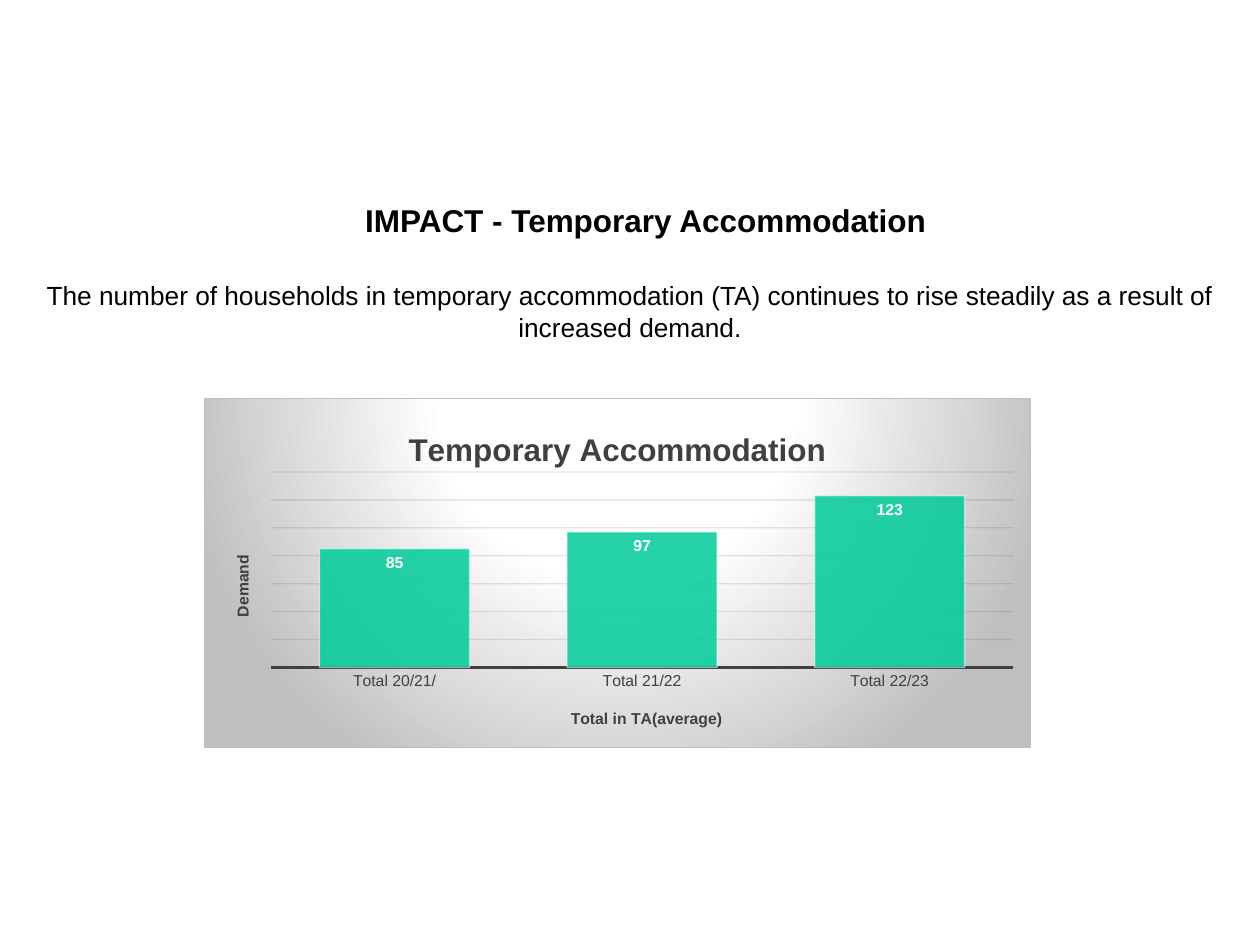
from lxml import etree
from pptx import Presentation, util as u
from pptx.chart.data import CategoryChartData
from pptx.dml.color import RGBColor
from pptx.enum import chart as ch, text
from pptx.oxml import parse_xml
from pptx.oxml.ns import nsdecls, qn

# Content: text, (left, top, width, height), size, bold, anchor
TEXTS = [
    ("IMPACT - Temporary Accommodation", (0.25, 1.58, 9.75, 0.33),
     18, True, text.MSO_ANCHOR.MIDDLE),
    ("The number of households in temporary accommodation (TA) continues to "
     "rise steadily as a result of increased demand.", (0.25, 2.17, 9.5, 4.5),
     15, False, text.MSO_ANCHOR.TOP),
]
DEMAND = {"Total 20/21/": 85, "Total 21/22": 97, "Total 22/23": 123}
CHART_AREA = (1.62, 3.16, 6.56, 2.78)
BACKDROP = [(0, "FFFFFF"), (39, "FFFFFF"), (100, "BFBFBF")]
FONT, GREY, WHITE = "Arial", "404040", "FFFFFF"


def rgb(value):
    return RGBColor.from_string(value)


def set_font(font, size, color, bold=False):
    font.name, font.size, font.bold = FONT, u.Pt(size), bold
    font.color.rgb = rgb(color)


def set_line(line, color, width):
    line.color.rgb = rgb(color)
    line.width = u.Pt(width)


def set_alpha(properties, percent):
    """Make every colour inside the element partly transparent."""
    for color in properties.iter(qn("a:srgbClr")):
        etree.SubElement(color, qn("a:alpha")).set("val", str(percent * 1000))


def place(parent, index, inner=False, **fractions):
    """Give a chart part a fixed position, in fractions of the chart."""
    for old in parent.findall(qn("c:layout")):
        parent.remove(old)
    layout = etree.Element(qn("c:layout"))
    manual = etree.SubElement(layout, qn("c:manualLayout"))
    settings = {"layoutTarget": "inner"} if inner else {}
    settings.update(xMode="edge", yMode="edge", **fractions)
    for tag, value in settings.items():
        etree.SubElement(manual, qn("c:" + tag)).set("val", str(value))
    parent.insert(index, layout)


def add_title(owner, words, size, x, y):
    title = owner.chart_title if hasattr(owner, "chart_title") else owner.axis_title
    para = title.text_frame.paragraphs[0]
    para.text = words
    set_font(para.font, size, GREY, True)
    element = para._p.getparent().getparent().getparent()
    place(element, 1, x=x, y=y)
    return element


deck = Presentation()
deck.slide_width, deck.slide_height = u.Inches(10), u.Inches(7.5)
page = deck.slides.add_slide(deck.slide_layouts[6])

# Heading and statement
for words, area, size, bold, anchor in TEXTS:
    box = page.shapes.add_textbox(*map(u.Inches, area))
    frame = box.text_frame
    frame.word_wrap, frame.vertical_anchor = True, anchor
    para = frame.paragraphs[0]
    para.text, para.alignment = words, text.PP_ALIGN.CENTER
    set_font(para.font, size, "000000", bold)

# Column chart
data = CategoryChartData()
data.categories = list(DEMAND)
data.add_series("Series 1", list(DEMAND.values()))
chart = page.shapes.add_chart(ch.XL_CHART_TYPE.COLUMN_CLUSTERED,
                              *map(u.Inches, CHART_AREA), data).chart
set_font(chart.font, 10, "000000")
chart.has_legend = False
plot = chart.plots[0]
plot.gap_width, plot.vary_by_categories = 65, False

bars = plot.series[0]
bars.smooth = False if hasattr(bars, "smooth") else None
bars.format.fill.solid()
bars.format.fill.fore_color.rgb = rgb("00CC99")
set_alpha(bars._element.find(qn("c:spPr")), 85)
set_line(bars.format.line, WHITE, 0.75)
set_alpha(bars._element.find(qn("c:spPr")).find(qn("a:ln")), 50)

labels = bars.data_labels
labels.show_value = True
labels.position = ch.XL_LABEL_POSITION.INSIDE_END
set_font(labels.font, 9, WHITE, True)

# Axes
categories, values = chart.category_axis, chart.value_axis
categories.major_tick_mark = ch.XL_TICK_MARK.NONE
set_font(categories.tick_labels.font, 9, GREY)
set_line(categories.format.line, GREY, 1.5)
values.minimum_scale, values.maximum_scale, values.major_unit = 0, 140, 20
values.visible = False
set_line(values.major_gridlines.format.line, "0D0D0D", 0.75)
set_alpha(values._element.find(qn("c:majorGridlines")), 10)

# Titles and plot position
add_title(chart, "Temporary Accommodation", 18, 0.24, 0.07)
add_title(categories, "Total in TA(average)", 9, 0.44, 0.88)
demand = add_title(values, "Demand", 9, 0.03, 0.44)
for body in demand.iter(qn("a:bodyPr")):
    body.set("rot", "-5400000")
    body.set("vert", "horz")
space = chart._chartSpace
place(space.find(qn("c:chart")).find(qn("c:plotArea")), 0, inner=True,
      x=0.08, y=0.21, w=0.9, h=0.56)

# Radial backdrop with a thin border
stops = "".join(f'<a:gs pos="{pos * 1000}"><a:srgbClr val="{color}"/></a:gs>'
                for pos, color in BACKDROP)
space.find(qn("c:chart")).addnext(parse_xml(
    f'<c:spPr {nsdecls("c", "a")}><a:gradFill><a:gsLst>{stops}</a:gsLst>'
    '<a:path path="circle"><a:fillToRect l="50000" t="-80000" r="50000" '
    'b="180000"/></a:path></a:gradFill><a:ln w="9525"><a:solidFill>'
    '<a:srgbClr val="BFBFBF"/></a:solidFill></a:ln></c:spPr>'))

deck.save("out.pptx")
